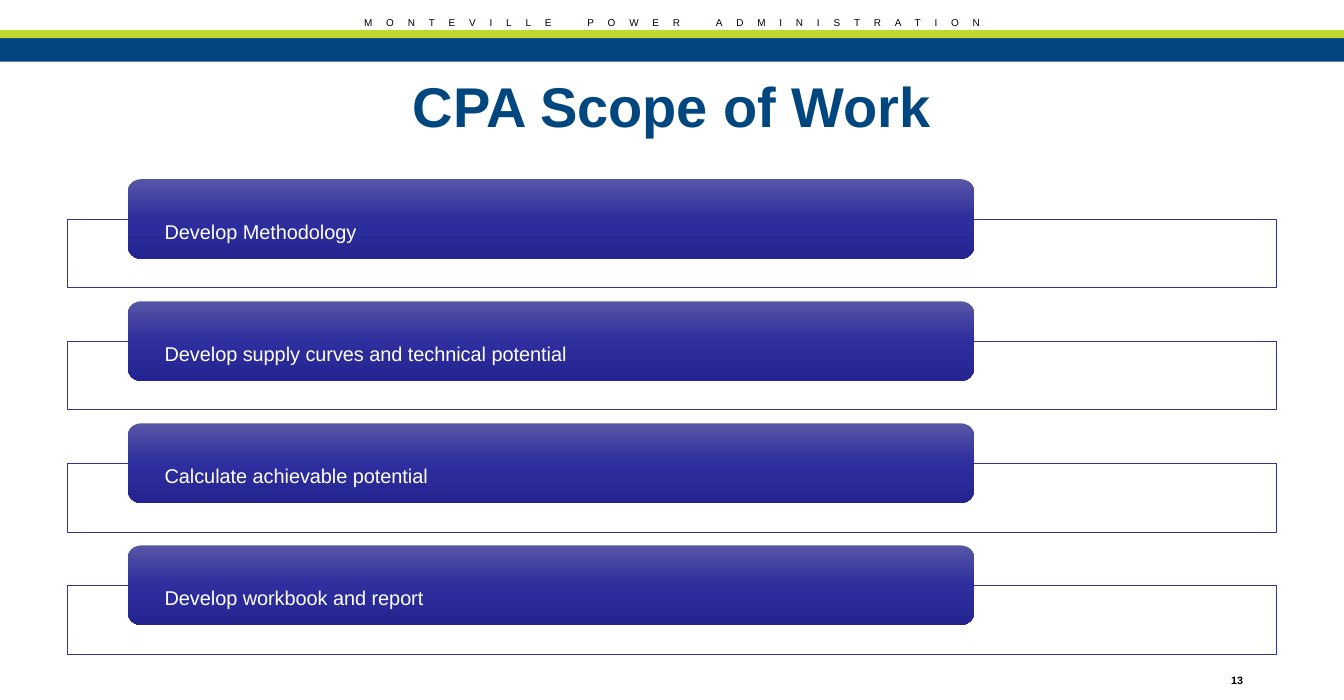
from dataclasses import dataclass

from lxml.etree import SubElement
from pptx import Presentation
from pptx.dml.color import RGBColor
from pptx.enum.shapes import MSO_SHAPE
from pptx.enum.text import MSO_ANCHOR, PP_ALIGN
from pptx.oxml.ns import qn
from pptx.util import Inches, Pt

COLORS = {
    "blue": "00467F", "lime": "C1D82F", "indigo": "333399",
    "white": "FFFFFF", "black": "000000",
}
STEP_GRADIENT = {0: "5656A6", 50: "2E2E9E", 100: "242491"}
STEP_PITCH = 1.09
SUBSCRIPT = "-25000"


@dataclass
class Box:
    left: float
    top: float
    width: float
    height: float

    def lengths(self) -> list:
        return [Inches(v) for v in (self.left, self.top, self.width, self.height)]


@dataclass
class Step:
    label: str
    top: float


def add_block(slide, box: Box, fill: str, line: str = "", kind=MSO_SHAPE.RECTANGLE):
    block = slide.shapes.add_shape(kind, *box.lengths())
    block.shadow.inherit = False
    block.fill.solid()
    block.fill.fore_color.rgb = RGBColor.from_string(COLORS[fill])
    if line:
        block.line.color.rgb = RGBColor.from_string(COLORS[line])
        block.line.width = Pt(0.5)
    else:
        block.line.fill.background()
    return block


def format_run(run, size: float, color: str, bold: bool = False, lowered: bool = False) -> None:
    run.font.name = "Arial"
    run.font.size = Pt(size)
    run.font.bold = bold
    run.font.color.rgb = RGBColor.from_string(COLORS[color])
    if lowered:
        run.font._element.set("baseline", SUBSCRIPT)


def add_text(slide, box: Box, text: str, size: float, color: str, bold: bool = False,
             lowered: bool = False, align=PP_ALIGN.CENTER):
    frame = slide.shapes.add_textbox(*box.lengths()).text_frame
    frame.word_wrap = True
    frame.vertical_anchor = MSO_ANCHOR.MIDDLE
    frame.text = text
    frame.paragraphs[0].alignment = align
    format_run(frame.paragraphs[0].runs[0], size, color, bold, lowered)
    return frame


def add_banner(slide, box: Box, name: str) -> None:
    """Write the name in widely tracked capitals, with wider gaps between words."""
    frame = slide.shapes.add_textbox(*box.lengths()).text_frame
    frame.word_wrap = True
    line = frame.paragraphs[0]
    line.alignment = PP_ALIGN.CENTER
    line.space_before = Pt(5.5)
    for part in name.replace(" ", "| |").split("|"):
        run = line.add_run()
        run.text = part
        format_run(run, 11, "black", lowered=True)
        run.font._element.set("spc", "1240" if part == " " else "890")


def shade_step(block) -> None:
    """Fill a step from light at the top to dark at the bottom."""
    block.fill.gradient()
    gradient = block._element.spPr.find(qn("a:gradFill"))
    for child in list(gradient):
        gradient.remove(child)
    stops = SubElement(gradient, qn("a:gsLst"))
    for position, color in STEP_GRADIENT.items():
        stop = SubElement(stops, qn("a:gs"), pos=str(position * 1000))
        SubElement(stop, qn("a:srgbClr"), val=color)
    SubElement(gradient, qn("a:lin"), ang="5400000", scaled="0")


def add_step(slide, step: Step) -> None:
    add_block(slide, Box(0.6, step.top + 0.36, 10.8, 0.61), "white", "indigo")
    bar = add_block(slide, Box(1.14, step.top, 7.56, 0.71), "indigo",
                    kind=MSO_SHAPE.ROUNDED_RECTANGLE)
    shade_step(bar)
    frame = add_text(slide, Box(1.18, step.top + 0.03, 7.49, 0.64), step.label, 22,
                     "white", lowered=True, align=PP_ALIGN.LEFT)
    frame.margin_left = frame.margin_right = Inches(0.29)
    frame.margin_top = frame.margin_bottom = 0
    frame.paragraphs[0].line_spacing = 0.9
    frame.paragraphs[0].space_after = Pt(7.7)


def main() -> None:
    deck = Presentation()
    deck.slide_width, deck.slide_height = Inches(12), Inches(6.25)
    slide = deck.slides.add_slide(deck.slide_layouts[6])

    # Header bands and organization name
    add_block(slide, Box(0, 0.34, 12, 0.21), "blue")
    add_block(slide, Box(0, 0.27, 12, 0.07), "lime")
    add_banner(slide, Box(0, 0, 12, 0.25), "MONTEVILLE POWER ADMINISTRATION")

    # Title and page number
    add_text(slide, Box(0, 0.61, 12, 0.65), "CPA Scope of Work", 36, "blue", bold=True)
    add_text(slide, Box(10.6, 5.85, 0.89, 0.33), "13", 12, "black", bold=True, lowered=True)

    # Work steps
    labels = [
        "Develop Methodology",
        "Develop supply curves and technical potential",
        "Calculate achievable potential",
        "Develop workbook and report",
    ]
    for row, label in enumerate(labels):
        add_step(slide, Step(label, 1.6 + row * STEP_PITCH))

    deck.save("out.pptx")


if __name__ == "__main__":
    main()
